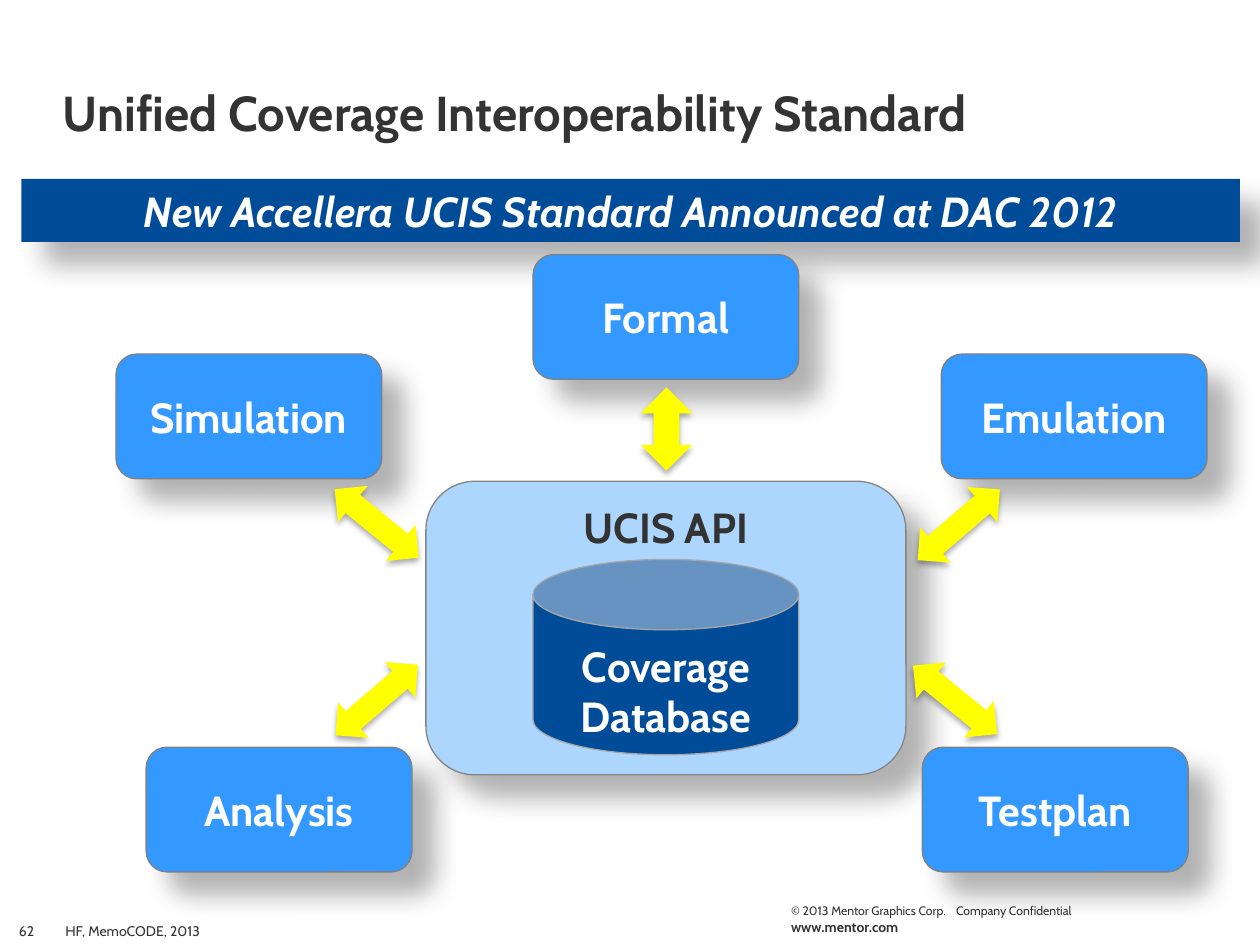
from lxml import etree
from pptx import Presentation
from pptx.dml.color import RGBColor
from pptx.enum.shapes import MSO_SHAPE
from pptx.enum.text import MSO_ANCHOR, PP_ALIGN
from pptx.oxml.ns import qn
from pptx.util import Inches, Pt

TOP, MIDDLE, BOTTOM = MSO_ANCHOR.TOP, MSO_ANCHOR.MIDDLE, MSO_ANCHOR.BOTTOM
LEFT, CENTER = PP_ALIGN.LEFT, PP_ALIGN.CENTER
RECTANGLE = MSO_SHAPE.RECTANGLE
ROUNDED = MSO_SHAPE.ROUNDED_RECTANGLE
CAN = MSO_SHAPE.CAN
DOUBLE_ARROW = MSO_SHAPE.LEFT_RIGHT_ARROW

FONT = "Cabin"
DARK, WHITE = "333333", "FFFFFF"
NAVY, BLUE, PALE, YELLOW = "004C99", "3398FF", "ADD6FF", "FFFF00"

# Shadows: opacity in percent, blur and distance in points, direction in degrees
BOX_SHADOW = (30, 15, 18, 45)
ARROW_SHADOW = (32, 3.5, 2.2, 90)

TOOLS = [  # name, left, top
    ("Simulation", 0.92, 2.81),
    ("Formal", 4.23, 2.02),
    ("Emulation", 7.47, 2.81),
    ("Analysis", 1.16, 5.93),
    ("Testplan", 7.32, 5.93),
]
ARROWS = [  # left, top, width, height, rotation
    (2.56, 3.97, 0.86, 0.37, 39.1),
    (7.18, 3.98, 0.86, 0.37, 319.3),
    (2.56, 5.37, 0.86, 0.37, 319.3),
    (7.15, 5.37, 0.86, 0.37, 39.1),
    (4.96, 3.2, 0.66, 0.41, 270),
]


def rgb(color):
    return RGBColor.from_string(color)


def write_text(shape, text, size, color=DARK, bold=False, italic=False, align=LEFT,
               anchor=TOP, side_inset=0.1, top_inset=0.05, tab=None):
    frame = shape.text_frame
    frame.word_wrap = True
    frame.vertical_anchor = anchor
    frame.margin_left = frame.margin_right = Inches(side_inset)
    frame.margin_top, frame.margin_bottom = Inches(top_inset), Inches(0.05)
    para = frame.paragraphs[0]
    para.text = text
    para.alignment = align
    if tab:
        properties = para._p.get_or_add_pPr()
        tabs = etree.SubElement(properties, qn("a:tabLst"))
        etree.SubElement(tabs, qn("a:tab"), pos=str(Inches(tab)), algn="l")
    font = para.font
    font.name, font.size = FONT, Pt(size)
    font.bold, font.italic = bold, italic
    font.color.rgb = rgb(color)


def add_text(slide, at, text, size, **style):
    box = slide.shapes.add_textbox(*map(Inches, at))
    write_text(box, text, size, **style)


def add_shadow(shape, opacity, blur, distance, direction):
    effects = shape.element.spPr.find(qn("a:effectLst"))
    shadow = etree.SubElement(
        effects, qn("a:outerShdw"), blurRad=str(Pt(blur)), dist=str(Pt(distance)),
        dir=str(direction * 60000), algn="ctr", rotWithShape="0")
    color = etree.SubElement(shadow, qn("a:srgbClr"), val="000000")
    etree.SubElement(color, qn("a:alpha"), val=str(opacity * 1000))


def add_shape(slide, kind, at, fill, line=None, shadow=None):
    shape = slide.shapes.add_shape(kind, *map(Inches, at))
    shape.fill.solid()
    shape.fill.fore_color.rgb = rgb(fill)
    if line:
        shape.line.color.rgb = rgb(line)
        shape.line.width = Pt(0.75)
    else:
        shape.line.fill.background()
    shape.shadow.inherit = False
    if shadow:
        add_shadow(shape, *shadow)
    return shape


def add_footer(slide):
    add_text(slide, (6.18, 7.24, 1.58, 0.23), "www.mentor.com", 8, bold=True)
    add_text(slide, (6.18, 7.12, 2.65, 0.22),
             "© 2013 Mentor Graphics Corp.\tCompany Confidential", 7, tab=1.31)
    add_text(slide, (0.42, 7.25, 5.7, 0.25), "HF, MemoCODE, 2013", 8, anchor=BOTTOM)
    add_text(slide, (0, 7.25, 0.42, 0.25), "62", 8, align=CENTER, anchor=BOTTOM)


def add_database(slide):
    label = {"size": 24, "bold": True, "align": CENTER}
    api = add_shape(slide, ROUNDED, (3.38, 3.82, 3.81, 2.33), PALE, "858585", BOX_SHADOW)
    write_text(api, "UCIS API", **label)
    database = add_shape(slide, CAN, (4.23, 4.44, 2.11, 1.55), NAVY, "A6A6A6")
    database.adjustments[0] = 0.36
    write_text(database, "Coverage Database", color=WHITE, anchor=MIDDLE,
               top_inset=0.3, **label)


def add_tool(slide, name, left, top):
    tool = add_shape(slide, ROUNDED, (left, top, 2.11, 0.99), BLUE, "808080", BOX_SHADOW)
    write_text(tool, name, 24, WHITE, bold=True, align=CENTER, anchor=MIDDLE)


def main():
    deck = Presentation()
    deck.slide_width, deck.slide_height = Inches(10), Inches(7.5)
    slide = deck.slides.add_slide(deck.slide_layouts[6])

    add_footer(slide)
    add_text(slide, (0, 0, 10, 1.17), "Unified Coverage Interoperability Standard", 28,
             bold=True, anchor=BOTTOM, side_inset=0.5)
    banner = add_shape(slide, RECTANGLE, (0.17, 1.42, 9.67, 0.5), NAVY, shadow=BOX_SHADOW)
    write_text(banner, "New Accellera UCIS Standard Announced at DAC 2012", 24, WHITE,
               bold=True, italic=True, align=CENTER)

    add_database(slide)
    for name, left, top in TOOLS:
        add_tool(slide, name, left, top)
    for *at, rotation in ARROWS:
        arrow = add_shape(slide, DOUBLE_ARROW, at, YELLOW, shadow=ARROW_SHADOW)
        arrow.rotation = rotation

    deck.save("out.pptx")


if __name__ == "__main__":
    main()
